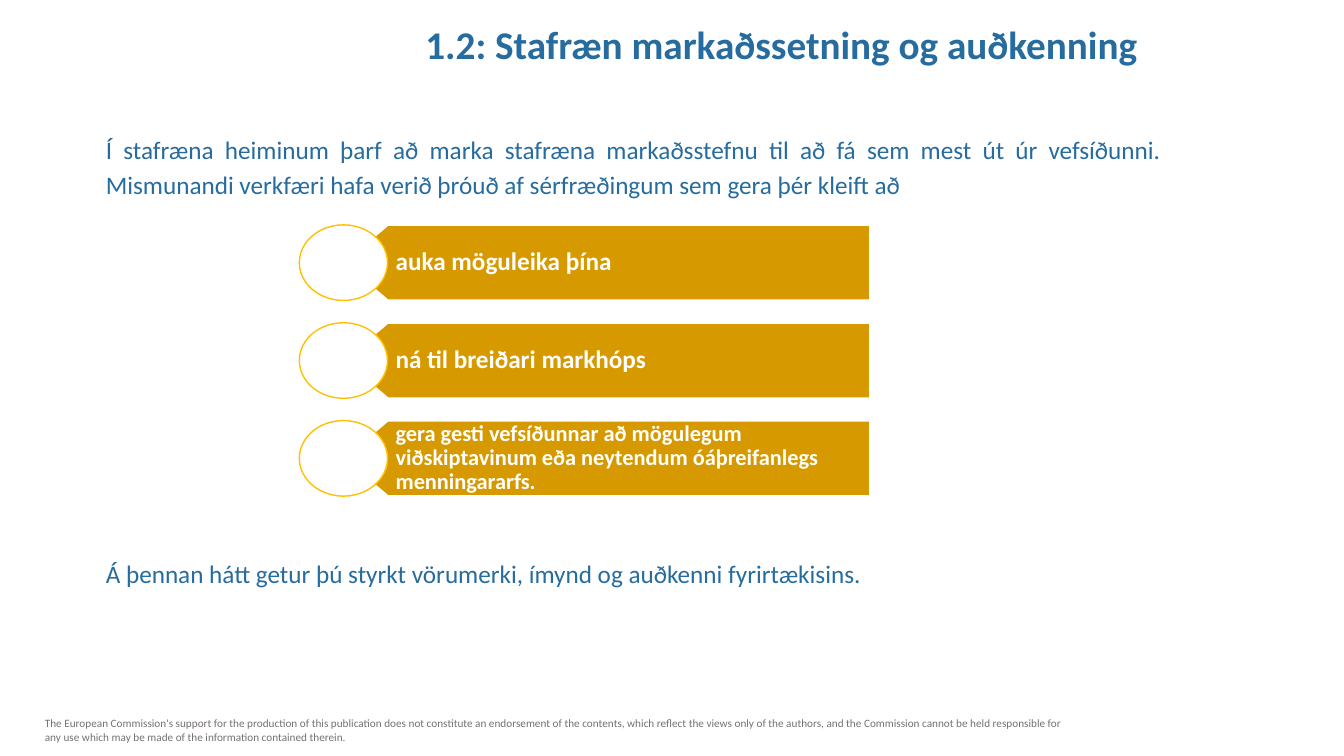
import pptx
import pptx.util
import pptx.dml.color
import pptx.enum.shapes
import pptx.enum.text

Pt = pptx.util.Pt
RGB = pptx.dml.color.RGBColor.from_string
ALIGN = pptx.enum.text.PP_ALIGN
ANCHOR = pptx.enum.text.MSO_ANCHOR

THEME = {
    "font": "Calibri",
    "blue": RGB("266C9F"),
    "amber": RGB("D69900"),
    "gold": RGB("FFC000"),
    "white": RGB("FFFFFF"),
    "grey": RGB("767171"),
    "title": 28,
    "body": 18,
    "long_goal": 16,
    "disclaimer": 8,
}


def write(shape, text, size, color, bold=False, align=ALIGN.LEFT, spacing=1.0, anchor=ANCHOR.TOP):
    frame = shape.text_frame
    frame.word_wrap = True
    frame.auto_size = pptx.enum.text.MSO_AUTO_SIZE.NONE
    frame.vertical_anchor = anchor
    frame.text = text
    paragraph = frame.paragraphs[0]
    paragraph.alignment = align
    paragraph.line_spacing = spacing
    paragraph.space_before = Pt(0)
    paragraph.font.name = THEME["font"]
    paragraph.font.size = Pt(size)
    paragraph.font.bold = bold
    paragraph.font.color.rgb = THEME[color]
    return frame


def paint(shape, fill, line, width):
    shape.shadow.inherit = False
    shape.fill.solid()
    shape.fill.fore_color.rgb = THEME[fill]
    shape.line.color.rgb = THEME[line]
    shape.line.width = Pt(width)


deck = pptx.Presentation()
deck.slide_width = Pt(960)
deck.slide_height = Pt(540)
slide = deck.slides.add_slide(deck.slide_layouts[5])

title = slide.shapes.title
title.left, title.top, title.width, title.height = Pt(175), Pt(6), Pt(766), Pt(46)
write(title, "1.2: Stafræn markaðssetning og auðkenning", THEME["title"], "blue",
      bold=True, align=ALIGN.CENTER, spacing=1.15)

statements = [
    (89.3, 60, "Í stafræna heiminum þarf að marka stafræna markaðsstefnu til að fá sem mest út úr "
               "vefsíðunni. Mismunandi verkfæri hafa verið þróuð af sérfræðingum sem gera þér kleift að"),
    (392, 34, "Á þennan hátt getur þú styrkt vörumerki, ímynd og auðkenni fyrirtækisins."),
]
for top, height, text in statements:
    statement = slide.shapes.add_textbox(Pt(50.4), Pt(top), Pt(786), Pt(height))
    frame = write(statement, text, THEME["body"], "blue", align=ALIGN.JUSTIFY, spacing=1.15)
    frame.margin_left = Pt(25.2)

goals = [
    ("auka möguleika þína", THEME["body"]),
    ("ná til breiðari markhóps", THEME["body"]),
    ("gera gesti vefsíðunnar að mögulegum viðskiptavinum eða neytendum óáþreifanlegs menningararfs.",
     THEME["long_goal"]),
]
bar_left, bar_shoulder, bar_right = 245.2, 277, 621.6
goal_height, goal_pitch = 54, 69.9
for index, (text, size) in enumerate(goals):
    top = 160.6 + index * goal_pitch
    bottom = top + goal_height
    outline = slide.shapes.build_freeform(Pt(bar_right), Pt(bottom))
    outline.add_line_segments([
        (Pt(bar_shoulder), Pt(bottom)),
        (Pt(bar_left), Pt(top + goal_height / 2)),
        (Pt(bar_shoulder), Pt(top)),
        (Pt(bar_right), Pt(top)),
    ])
    bar = outline.convert_to_shape()
    paint(bar, "amber", "white", 1.5)
    frame = write(bar, text, size, "white", bold=True, spacing=0.9, anchor=ANCHOR.MIDDLE)
    frame.margin_left = Pt(37.4)

    circle = slide.shapes.add_shape(pptx.enum.shapes.MSO_SHAPE.OVAL,
                                    Pt(213.8), Pt(top), Pt(63), Pt(goal_height))
    paint(circle, "white", "gold", 1)

disclaimer = slide.shapes.add_textbox(Pt(25), Pt(508.3), Pt(753), Pt(26.6))
write(disclaimer, "The European Commission's support for the production of this publication does not "
      "constitute an endorsement of the contents, which reflect the views only of the authors, and the "
      "Commission cannot be held responsible for any use which may be made of the information "
      "contained therein.", THEME["disclaimer"], "grey")

deck.save("out.pptx")
